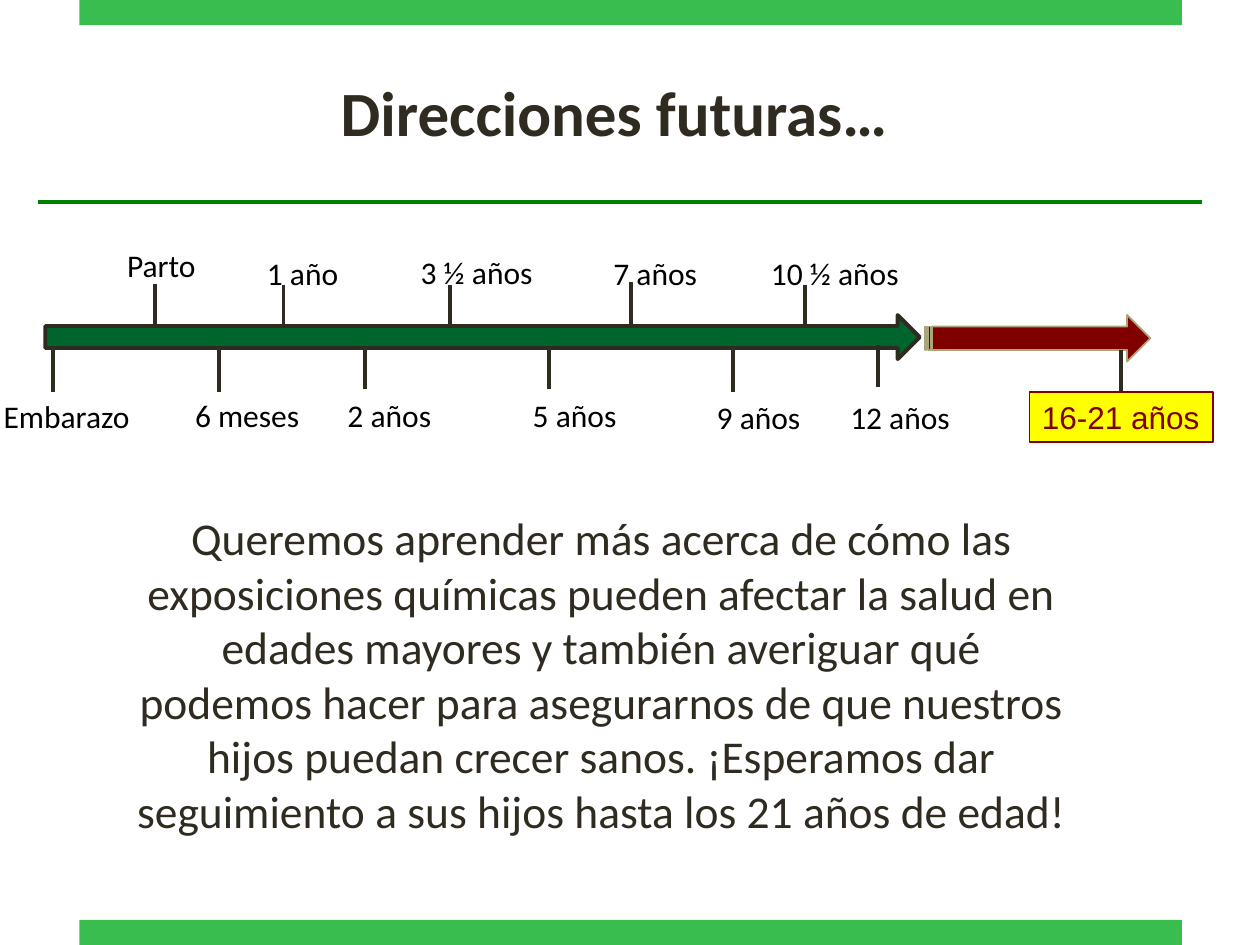
from lxml import etree
from pptx import Presentation
from pptx.dml.color import RGBColor
from pptx.enum.shapes import MSO_CONNECTOR, MSO_SHAPE
from pptx.enum.text import MSO_ANCHOR, MSO_AUTO_SIZE, PP_ALIGN
from pptx.oxml.ns import qn
from pptx.util import Inches, Pt

COLORS = {
    "band": "3ABD4F",
    "rule": "008000",
    "ink": "2F2B20",
    "label": "000000",
    "past": "00642D",
    "future": "800000",
    "future_edge": "AAA67B",
    "highlight": "FFFF00",
}

# Stages: label, label left, label top, label width, tick x, tick top
STAGES = [
    ("Embarazo", -0.07, 3.10, 1.21, 0.42, 2.78),
    ("Parto", 0.91, 1.90, 0.75, 1.23, 2.25),
    ("6 meses", 1.45, 3.09, 1.04, 1.74, 2.78),
    ("1 año", 2.02, 1.97, 0.78, 2.25, 2.26),
    ("2 años", 2.66, 3.09, 0.87, 2.90, 2.76),
    ("3 ½ años", 3.24, 1.96, 1.10, 3.57, 2.26),
    ("5 años", 4.13, 3.09, 0.87, 4.36, 2.76),
    ("7 años", 4.77, 1.97, 0.87, 5.01, 2.24),
    ("9 años", 5.59, 3.11, 0.87, 5.82, 2.78),
    ("10 ½ años", 6.02, 1.97, 1.23, 6.39, 2.26),
    ("12 años", 6.65, 3.11, 1.00, 6.97, 2.74),
]
TICK_LENGTH = 0.33

MESSAGE = (
    "Queremos aprender más acerca de cómo las exposiciones químicas pueden "
    "afectar la salud en edades mayores y también averiguar qué podemos hacer "
    "para asegurarnos de que nuestros hijos puedan crecer sanos. ¡Esperamos dar "
    "seguimiento a sus hijos hasta los 21 años de edad!"
)


def rgb(name):
    return RGBColor.from_string(COLORS[name])


def write(shape, text, size, color, font="Calibri", align=PP_ALIGN.LEFT,
          bold=False, wrap=True):
    frame = shape.text_frame
    frame.text = text
    frame.word_wrap = wrap
    frame.auto_size = MSO_AUTO_SIZE.SHAPE_TO_FIT_TEXT
    paragraph = frame.paragraphs[0]
    paragraph.alignment = align
    paragraph.font.name = font
    paragraph.font.size = Pt(size)
    paragraph.font.bold = bold
    paragraph.font.color.rgb = rgb(color)


def add_text(slide, box, text, size, color, **style):
    textbox = slide.shapes.add_textbox(*map(Inches, box))
    write(textbox, text, size, color, **style)


def add_block(slide, kind, box, fill, edge=None, edge_width=1):
    block = slide.shapes.add_shape(kind, *map(Inches, box))
    block.shadow.inherit = False
    block.fill.solid()
    block.fill.fore_color.rgb = rgb(fill)
    if edge:
        block.line.color.rgb = rgb(edge)
        block.line.width = Pt(edge_width)
    else:
        block.line.fill.background()
    return block


def add_line(slide, start, end, color):
    line = slide.shapes.add_connector(
        MSO_CONNECTOR.STRAIGHT, *map(Inches, (*start, *end)))
    line.line.color.rgb = rgb(color)
    line.line.width = Pt(2.25)
    etree.SubElement(line._element.spPr, qn("a:effectLst"))
    return line


def add_tick(slide, x, top):
    return add_line(slide, (x, top), (x, top + TICK_LENGTH), "ink")


def add_title(slide, text):
    title = slide.shapes.title
    title.left, title.top, title.width, title.height = map(
        Inches, (-0.06, 0.53, 9.87, 0.71))
    write(title, text, 36, "ink", align=PP_ALIGN.CENTER, bold=True)
    title.text_frame.vertical_anchor = MSO_ANCHOR.MIDDLE


def add_timeline(slide):
    # Stages already covered
    add_block(slide, MSO_SHAPE.RIGHT_ARROW, (0.36, 2.5, 6.94, 0.35),
              "past", "ink", 2.25)
    for label, left, top, width, tick_x, tick_top in STAGES:
        add_tick(slide, tick_x, tick_top)
        add_text(slide, (left, top, width, 0.4), label, 18, "label", wrap=False)

    # Planned follow-up
    add_block(slide, MSO_SHAPE.STRIPED_RIGHT_ARROW, (7.34, 2.5, 1.79, 0.37),
              "future", "future_edge")
    future_tick = add_tick(slide, 8.9, 2.78)
    future_stage = add_block(slide, MSO_SHAPE.RECTANGLE, (8.17, 3.11, 1.46, 0.4),
                             "highlight", "future")
    write(future_stage, "16-21 años", 18, "future", font="Arial", wrap=False)
    future_stage.text_frame.vertical_anchor = MSO_ANCHOR.TOP
    future_tick.end_connect(future_stage, 0)


def main():
    prs = Presentation()
    prs.slide_width, prs.slide_height = Inches(10), Inches(7.5)
    slide = prs.slides.add_slide(prs.slide_layouts[5])

    # Frame of the page
    for top in (0, 7.3):
        add_block(slide, MSO_SHAPE.RECTANGLE, (0.63, top, 8.75, 0.2), "band")
    add_line(slide, (0.3, 1.6), (9.54, 1.6), "rule")

    # Content
    add_title(slide, "Direcciones futuras…")
    add_text(slide, (0.95, 4, 7.65, 2.73), MESSAGE, 26, "ink",
             align=PP_ALIGN.CENTER)
    add_timeline(slide)

    prs.save("out.pptx")


if __name__ == "__main__":
    main()
